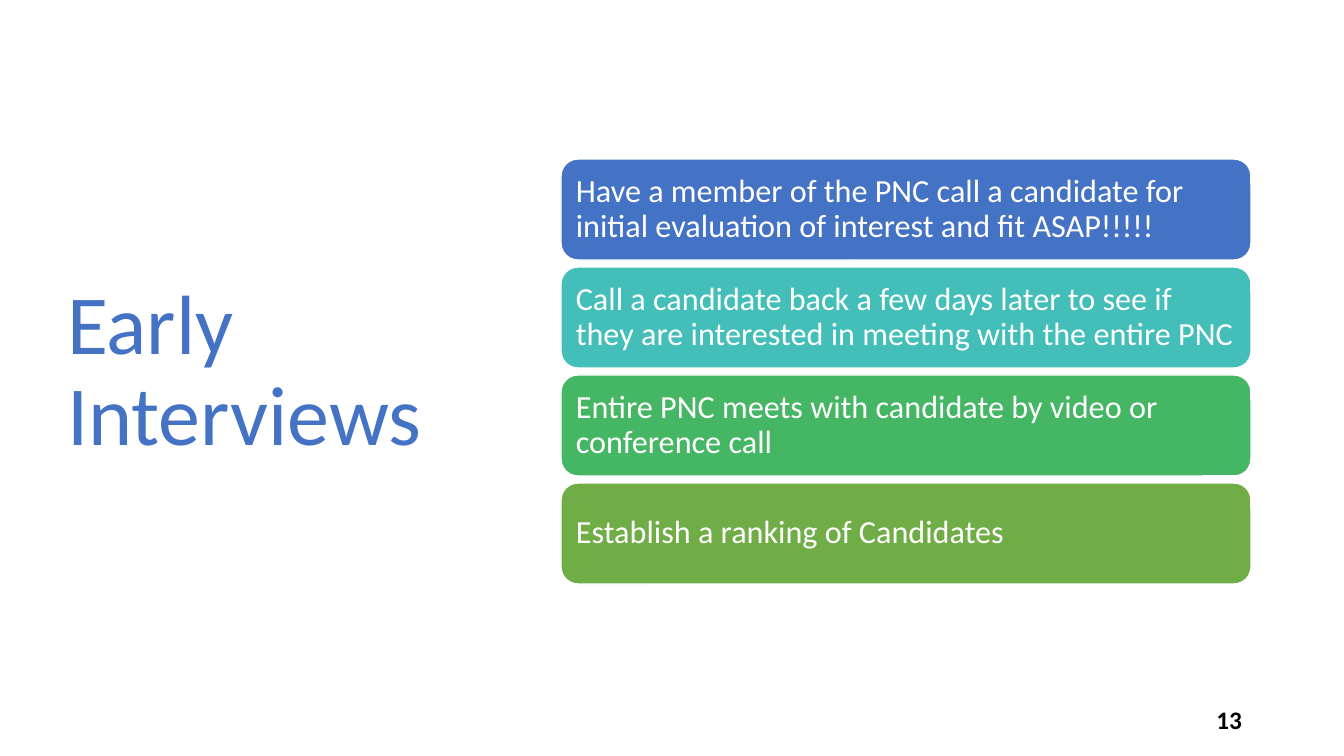
import pptx
import pptx.util
import pptx.dml.color
import pptx.enum.shapes
import pptx.enum.text

RGBColor = pptx.dml.color.RGBColor
Align = pptx.enum.text.PP_ALIGN

BLUE = RGBColor(0x44, 0x72, 0xC4)
TEAL = RGBColor(0x43, 0xBE, 0xB9)
GREEN = RGBColor(0x45, 0xB6, 0x64)
OLIVE = RGBColor(0x70, 0xAD, 0x47)
WHITE = RGBColor(0xFF, 0xFF, 0xFF)
BLACK = RGBColor(0x00, 0x00, 0x00)

HEADING = "Early Interviews"
STEPS = [
    ("Have a member of the PNC call a candidate for initial evaluation of interest and fit ASAP!!!!!", BLUE),
    ("Call a candidate back a few days later to see if they are interested in meeting with the entire PNC", TEAL),
    ("Entire PNC meets with candidate by video or conference call", GREEN),
    ("Establish a ranking of Candidates", OLIVE),
]
PAGE_NUMBER = "13"

PX_PER_INCH = 100.8
SLIDE_SIZE = (1344, 756)
HEADING_BOX = (57, 69, 419, 607)
PAGE_NUMBER_BOX = (950, 701, 302, 40)
STEP_LEFT, STEP_TOP, STEP_WIDTH, STEP_HEIGHT = 561, 159, 690, 101
STEP_GAP = 7

FRAME_FORMAT = {
    "word_wrap": True,
    "auto_size": pptx.enum.text.MSO_AUTO_SIZE.NONE,
    "vertical_anchor": pptx.enum.text.MSO_ANCHOR.MIDDLE,
}
HEADING_FONT = {"name": "Calibri", "size": pptx.util.Pt(60), "bold": False}
STEP_FONT = {"name": "Calibri", "size": pptx.util.Pt(23), "bold": False}
PAGE_NUMBER_FONT = {"name": "Calibri", "size": pptx.util.Pt(18), "bold": True}


def emu(px):
    return pptx.util.Inches(px / PX_PER_INCH)


def set_all(target, values):
    for key, value in values.items():
        setattr(target, key, value)


def place(part, box):
    set_all(part, dict(zip(("left", "top", "width", "height"), map(emu, box))))


def write(part, words, font, color, alignment=Align.LEFT):
    frame = part.text_frame
    set_all(frame, FRAME_FORMAT)
    paragraph = frame.paragraphs[0]
    set_all(paragraph, {"alignment": alignment, "line_spacing": 0.9})
    run = paragraph.add_run()
    run.text = words
    set_all(run.font, font)
    run.font.color.rgb = color


def main():
    deck = pptx.Presentation()
    deck.slide_width, deck.slide_height = map(emu, SLIDE_SIZE)
    slide = deck.slides.add_slide(deck.slide_layouts[5])

    heading = slide.shapes.title
    place(heading, HEADING_BOX)
    write(heading, HEADING, HEADING_FONT, BLUE)

    page_number = slide.shapes.add_textbox(*map(emu, PAGE_NUMBER_BOX))
    write(page_number, PAGE_NUMBER, PAGE_NUMBER_FONT, BLACK, Align.RIGHT)

    for index, (words, color) in enumerate(STEPS):
        top = STEP_TOP + index * (STEP_HEIGHT + STEP_GAP)
        step = slide.shapes.add_shape(
            pptx.enum.shapes.MSO_SHAPE.ROUNDED_RECTANGLE,
            *map(emu, (STEP_LEFT, top, STEP_WIDTH, STEP_HEIGHT)))
        step.shadow.inherit = False
        step.fill.solid()
        step.fill.fore_color.rgb = color
        step.line.color.rgb = WHITE
        step.line.width = pptx.util.Pt(1)
        write(step, words, STEP_FONT, WHITE)

    deck.save("out.pptx")


if __name__ == "__main__":
    main()
